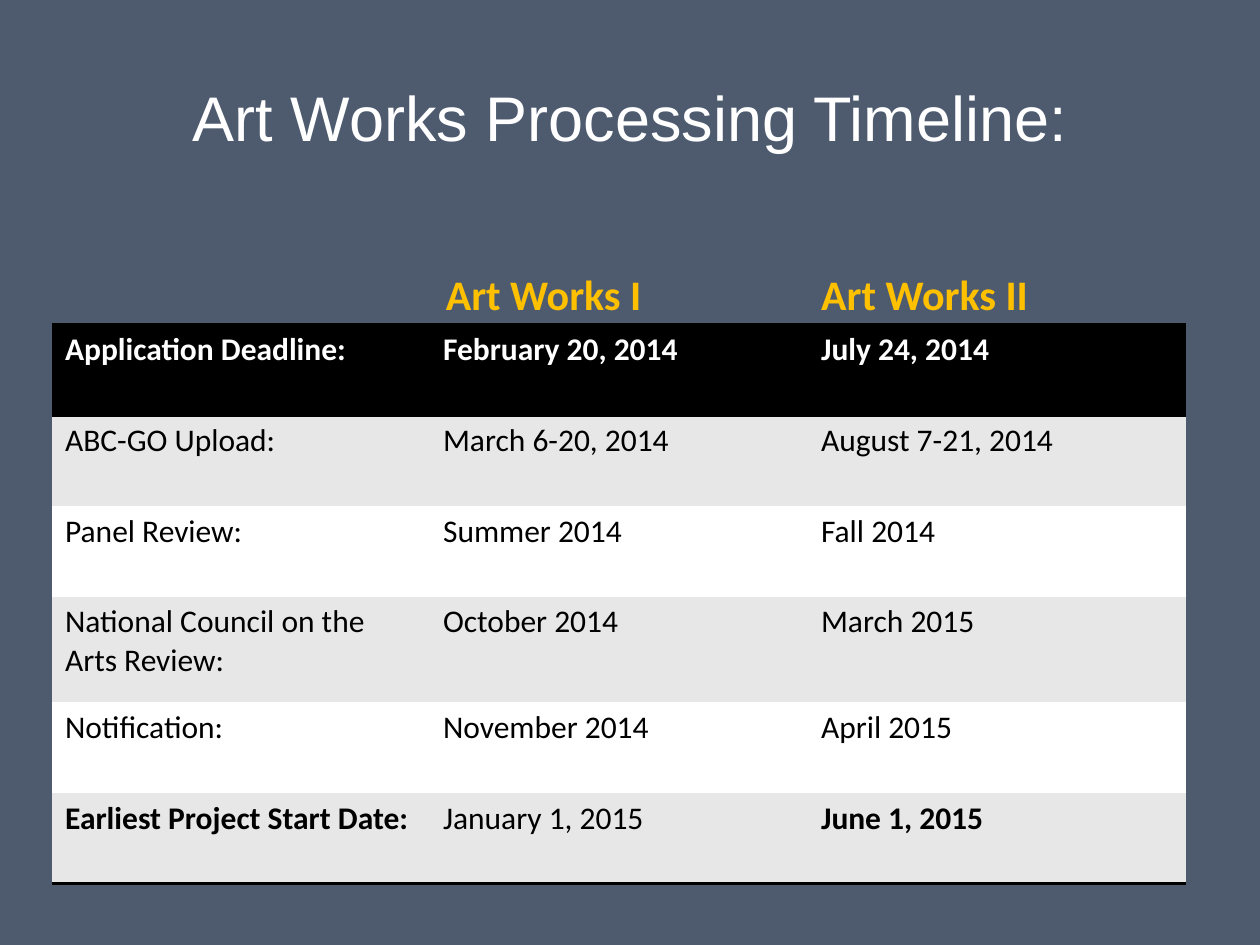
from lxml.etree import SubElement
from pptx import Presentation
from pptx.dml.color import RGBColor
from pptx.enum.text import MSO_ANCHOR as Anchor, PP_ALIGN as Align
from pptx.oxml.ns import qn
from pptx.util import Pt

BLACK, WHITE, GREY, GOLD, SLATE = "000000", "FFFFFF", "E7E7E7", "FFC000", "4E5B6F"
NO_GRID_STYLE = "{2D5ABB26-0587-4C30-8999-92F81FD0307C}"

TIMELINE = [
    ("Application Deadline:", "February 20, 2014", "July 24, 2014"),
    ("ABC-GO Upload:", "March 6-20, 2014", "August 7-21, 2014"),
    ("Panel Review:", "Summer 2014", "Fall 2014"),
    ("National Council on the Arts Review:", "October 2014", "March 2015"),
    ("Notification:", "November 2014", "April 2015"),
    ("Earliest Project Start Date:", "January 1, 2015", "June 1, 2015"),
]
COLUMN_WIDTH = 216
ROW_HEIGHTS = [51.8, 51.8, 51.8, 60.5, 51.8, 51.8]
LAST = len(TIMELINE) - 1


def color(hex_value):
    return RGBColor.from_string(hex_value)


def write(paragraph, text, hex_value, **font_format):
    run = paragraph.add_run()
    run.text = text
    run.font.color.rgb = color(hex_value)
    for name, value in font_format.items():
        setattr(run.font, name, value)


def add_title(slide):
    title = slide.shapes.title
    title.left, title.top, title.width, title.height = Pt(36), Pt(21.6), Pt(648), Pt(90)
    title.text_frame.vertical_anchor = Anchor.MIDDLE
    heading = title.text_frame.paragraphs[0]
    heading.alignment = Align.CENTER
    write(heading, "Art Works Processing Timeline:", WHITE, name="Arial", size=Pt(36))


def add_border(cell, side):
    line = SubElement(cell._tc.get_or_add_tcPr(), qn(f"a:{side}"), w=str(Pt(2)))
    SubElement(SubElement(line, qn("a:solidFill")), qn("a:srgbClr"), val=BLACK)


def fill_cell(cell, text, row, column):
    is_header = row == 0
    is_bold = is_header or (row == LAST and column != 1)
    # Borders precede the fill in the cell properties
    if is_header:
        add_border(cell, "lnT")
    if row in (0, LAST):
        add_border(cell, "lnB")
    cell.fill.solid()
    cell.fill.fore_color.rgb = color(BLACK if is_header else GREY if row % 2 else WHITE)
    write(cell.text_frame.paragraphs[0], text, WHITE if is_header else BLACK,
          name="Calibri", size=Pt(18), bold=is_bold)


def add_timeline(slide):
    frame = slide.shapes.add_table(len(TIMELINE), 3, Pt(30), Pt(185.5),
                                   Pt(3 * COLUMN_WIDTH), Pt(sum(ROW_HEIGHTS)))
    timeline = frame.table
    timeline._tbl.tblPr.find(qn("a:tableStyleId")).text = NO_GRID_STYLE
    for column in timeline.columns:
        column.width = Pt(COLUMN_WIDTH)
    for row, (height, entries) in enumerate(zip(ROW_HEIGHTS, TIMELINE)):
        timeline.rows[row].height = Pt(height)
        for column, text in enumerate(entries):
            fill_cell(timeline.cell(row, column), text, row, column)


def add_round_headings(slide):
    box = slide.shapes.add_textbox(Pt(247.7), Pt(149.8), Pt(444), Pt(36))
    box.text_frame.word_wrap = True
    rounds = box.text_frame.paragraphs[0]
    # A tab stop lines the second heading up with the third column
    tabs = SubElement(rounds._p.get_or_add_pPr(), qn("a:tabLst"))
    SubElement(tabs, qn("a:tab"), pos=str(Pt(214.5)), algn="l")
    write(rounds, "Art Works I\tArt Works II", GOLD,
          name="Calibri", size=Pt(24), bold=True)


def main():
    deck = Presentation()
    deck.slide_width, deck.slide_height = Pt(720), Pt(540)
    slide = deck.slides.add_slide(deck.slide_layouts[5])
    slide.background.fill.solid()
    slide.background.fill.fore_color.rgb = color(SLATE)
    add_title(slide)
    add_timeline(slide)
    add_round_headings(slide)
    deck.save("out.pptx")


if __name__ == "__main__":
    main()
